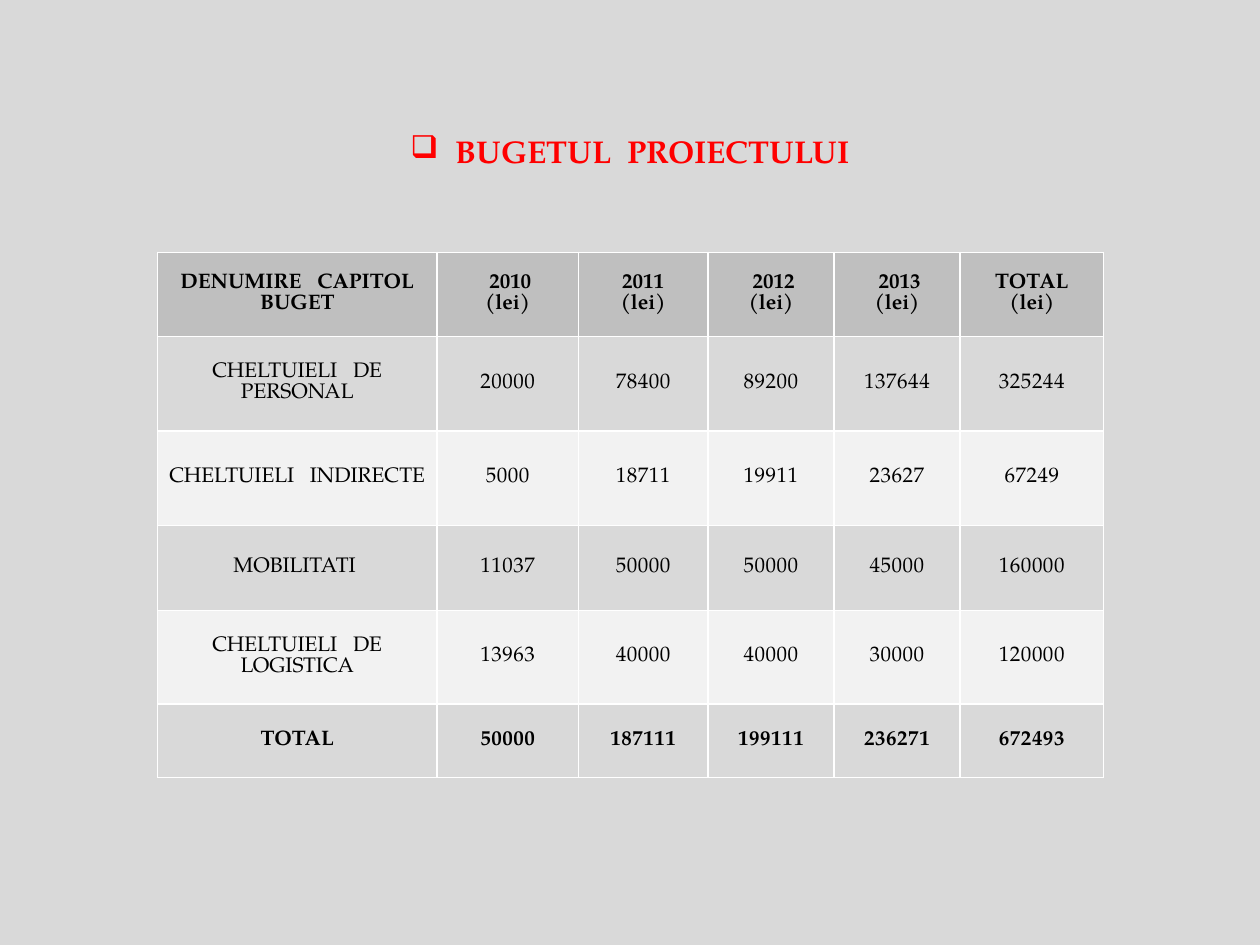
from dataclasses import dataclass

from lxml.etree import SubElement
from pptx import Presentation
from pptx.dml.color import RGBColor
from pptx.enum.text import MSO_ANCHOR, MSO_AUTO_SIZE, PP_ALIGN
from pptx.oxml.ns import qn
from pptx.util import Inches, Pt

HEADINGS = ["DENUMIRE   CAPITOL BUGET", " 2010\n(lei)", "2011\n(lei)",
            " 2012\n(lei)", " 2013\n(lei)", "TOTAL\n(lei)"]
EXPENSES = [
    ["CHELTUIELI   DE PERSONAL", 20000, 78400, 89200, 137644, 325244],
    ["CHELTUIELI   INDIRECTE", 5000, 18711, 19911, 23627, 67249],
    ["MOBILITATI ", 11037, 50000, 50000, 45000, 160000],
    ["CHELTUIELI   DE LOGISTICA", 13963, 40000, 40000, 30000, 120000],
    ["TOTAL", 50000, 187111, 199111, 236271, 672493],
]
COLUMN_SHARES = [0.222, 0.112, 0.103, 0.1, 0.1, 0.114]
ROW_SHARES = [0.089, 0.1, 0.1, 0.09, 0.099, 0.078]


@dataclass(frozen=True)
class Theme:
    """Colours and type of the budget slide."""
    font: str = "TeX Gyre Pagella"
    background: str = "D9D9D9"
    accent: str = "FF0000"
    ink: str = "000000"
    border: str = "FFFFFF"
    header: str = "BFBFBF"
    bands: tuple = ("D9D9D9", "F2F2F2")
    title_size: int = 18
    table_size: int = 12
    tracking: int = 30


class BudgetSlide:
    """Draws the elements of one slide in a shared theme."""

    def __init__(self, deck, theme):
        self.width, self.height = deck.slide_width, deck.slide_height
        self.theme = theme
        self.slide = deck.slides.add_slide(deck.slide_layouts[5])
        self.paint(self.slide.background.fill, theme.background)

    def paint(self, target, color):
        """Gives a fill one solid colour."""
        target.solid()
        target.fore_color.rgb = RGBColor.from_string(color)

    def place(self, left, top, width, height):
        """Turns shares of the slide into lengths."""
        return (int(left * self.width), int(top * self.height),
                int(width * self.width), int(height * self.height))

    def add_text(self, paragraph, text, size, color, bold):
        """Adds one centred run and returns it."""
        paragraph.alignment = PP_ALIGN.CENTER
        run = paragraph.add_run()
        run.text = text
        run.font.name = self.theme.font
        run.font.size = Pt(size)
        run.font.bold = bold
        run.font.color.rgb = RGBColor.from_string(color)
        return run

    def title(self, text, bullet, box):
        """Fills the title placeholder with a bulleted heading."""
        heading = self.slide.shapes.title
        heading.left, heading.top, heading.width, heading.height = self.place(*box)
        frame = heading.text_frame
        frame.word_wrap = True
        frame.auto_size = MSO_AUTO_SIZE.SHAPE_TO_FIT_TEXT
        frame.vertical_anchor = MSO_ANCHOR.TOP
        paragraph = frame.paragraphs[0]
        self.add_text(paragraph, text, self.theme.title_size, self.theme.accent, True)
        properties = paragraph._p.get_or_add_pPr()
        hanging = Inches(0.36)
        properties.set("marL", str(hanging))
        properties.set("indent", str(-hanging))
        tint = SubElement(properties, qn("a:buClr"))
        SubElement(tint, qn("a:srgbClr"), val=self.theme.accent)
        SubElement(properties, qn("a:buChar"), char=bullet)

    def outline(self, cell):
        """Draws the four borders of a cell."""
        properties = cell._tc.get_or_add_tcPr()
        for side in ("a:lnL", "a:lnR", "a:lnT", "a:lnB"):
            edge = SubElement(properties, qn(side), w=str(Pt(1)))
            solid = SubElement(edge, qn("a:solidFill"))
            SubElement(solid, qn("a:srgbClr"), val=self.theme.border)

    def cell(self, cell, value, color, bold):
        """Formats a cell and adds one paragraph per line."""
        self.outline(cell)
        self.paint(cell.fill, color)
        cell.vertical_anchor = MSO_ANCHOR.MIDDLE
        cell.margin_left = cell.margin_right = Inches(0.01)
        cell.margin_top = cell.margin_bottom = Inches(0.01)
        frame = cell.text_frame
        for index, line in enumerate(str(value).split("\n")):
            paragraph = frame.add_paragraph() if index else frame.paragraphs[0]
            paragraph.line_spacing = Pt(self.theme.table_size)
            run = self.add_text(paragraph, line, self.theme.table_size, self.theme.ink, bold)
            if isinstance(value, int):
                run.font._element.set("spc", str(self.theme.tracking))

    def table(self, records, left, top, column_shares, row_shares):
        """Builds a table with a header, bands and a bold last row."""
        box = self.place(left, top, sum(column_shares), sum(row_shares))
        grid = self.slide.shapes.add_table(len(records), len(column_shares), *box).table
        for column, share in zip(grid.columns, column_shares):
            column.width = int(share * self.width)
        for row, share in zip(grid.rows, row_shares):
            row.height = int(share * self.height)
        for r, record in enumerate(records):
            color = self.theme.bands[(r - 1) % 2] if r else self.theme.header
            for c, value in enumerate(record):
                self.cell(grid.cell(r, c), value, color, r in (0, len(records) - 1))


def main():
    """Builds and saves the budget slide."""
    deck = Presentation()
    deck.slide_width, deck.slide_height = Inches(10), Inches(7.5)
    budget = BudgetSlide(deck, Theme())
    budget.title("BUGETUL  PROIECTULUI", "❑", (0.3, 0.133, 0.4, 0.054))
    budget.table([HEADINGS, *EXPENSES], 0.125, 0.267, COLUMN_SHARES, ROW_SHARES)
    deck.save("out.pptx")


if __name__ == "__main__":
    main()
